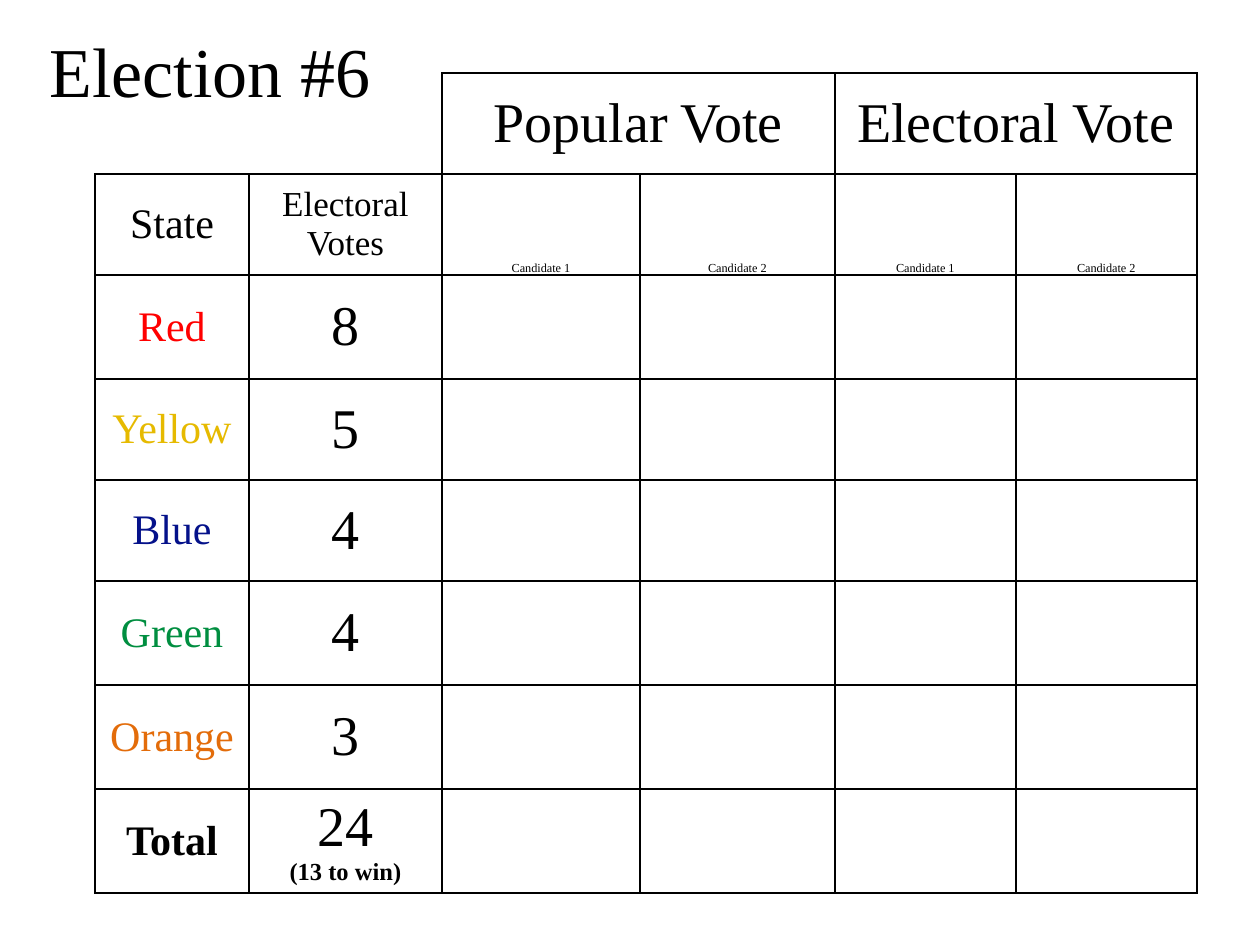
import pptx
import pptx.dml.color
import pptx.enum.text
import pptx.oxml
import pptx.oxml.ns
import pptx.util

SCALE = 914400 / 126
ALIGN = pptx.enum.text.PP_ALIGN
ANCHOR = pptx.enum.text.MSO_ANCHOR
BLACK = "000000"

COLS = [154, 193, 198, 195, 181, 181]
ROWS = [101, 101, 104, 101, 101, 104, 104, 104]
STATES = [
    ("Red", "FF0000", 8),
    ("Yellow", "E6BA00", 5),
    ("Blue", "04118A", 4),
    ("Green", "008E40", 4),
    ("Orange", "E36C0A", 3),
]


def px(size):
    return pptx.util.Emu(round(size * SCALE))


def paint(font, color):
    font.color.rgb = pptx.dml.color.RGBColor.from_string(color)


def write(frame, text, size=24, color=BLACK, bold=False, more=False):
    """Put centred text in a frame; more=True adds a new paragraph."""
    para = frame.add_paragraph() if more else frame.paragraphs[0]
    para.alignment = ALIGN.CENTER
    run = para.add_run()
    run.text = text
    run.font.name = "Times New Roman"
    run.font.size = pptx.util.Pt(size)
    run.font.bold = bold
    paint(run.font, color)


class Deck:
    def __init__(self, wide, high):
        self.show = pptx.Presentation()
        self.show.slide_width, self.show.slide_height = px(wide), px(high)
        self.slide = self.show.slides.add_slide(self.show.slide_layouts[5])

    def title(self, text, left, top, wide, high):
        shape = self.slide.shapes.title
        shape.left, shape.top = px(left), px(top)
        shape.width, shape.height = px(wide), px(high)
        frame = shape.text_frame
        frame.vertical_anchor = ANCHOR.TOP
        frame.auto_size = pptx.enum.text.MSO_AUTO_SIZE.SHAPE_TO_FIT_TEXT
        write(frame, text, size=40)

    def table(self, left, top, cols, rows):
        shape = self.slide.shapes.add_table(
            len(rows), len(cols), px(left), px(top), px(sum(cols)), px(sum(rows)))
        grid = shape.table
        grid.first_row = grid.horz_banding = False
        for col, wide in zip(grid.columns, cols):
            col.width = px(wide)
        for row, high in zip(grid.rows, rows):
            row.height = px(high)
        for r in range(len(rows)):
            for c in range(len(cols)):
                blank = r == 0 and c < 2
                self.style(grid.cell(r, c), "RB" if blank else "LRTB")
        return grid

    def style(self, cell, sides):
        """Rule the named sides of a cell, and clear its fill."""
        cell.margin_left = cell.margin_right = px(8)
        cell.margin_top = cell.margin_bottom = 0
        cell.vertical_anchor = ANCHOR.MIDDLE
        props = cell._tc.get_or_add_tcPr()
        for side in "LRTB":
            fill = (f'<a:solidFill><a:srgbClr val="{BLACK}"/></a:solidFill>'
                    if side in sides else "<a:noFill/>")
            props.append(pptx.oxml.parse_xml(
                f'<a:ln{side} {pptx.oxml.ns.nsdecls("a")} w="12700">{fill}</a:ln{side}>'))
        cell.fill.background()


def main():
    deck = Deck(1260, 945)
    grid = deck.table(95, 73, COLS, ROWS)
    for c, text in enumerate(["", "Popular Vote", "Electoral Vote"]):
        head = grid.cell(0, 2 * c)
        head.merge(grid.cell(0, 2 * c + 1))
        if text:
            write(head.text_frame, text, size=32)
    # The blank corner has no rule between its two columns.
    deck_corner = grid.cell(0, 1)._tc.tcPr
    deck_corner.find(pptx.oxml.ns.qn("a:lnL"))

    write(grid.cell(1, 0).text_frame, "State")
    write(grid.cell(1, 1).text_frame, "Electoral Votes", size=20)
    for c in range(2, 6):
        cell = grid.cell(1, c)
        cell.vertical_anchor = ANCHOR.BOTTOM
        write(cell.text_frame, f"Candidate {c % 2 + 1}", size=7)

    for r, (state, color, votes) in enumerate(STATES, 2):
        write(grid.cell(r, 0).text_frame, state, color=color)
        write(grid.cell(r, 1).text_frame, str(votes), size=32)

    write(grid.cell(7, 0).text_frame, "Total", bold=True)
    total = grid.cell(7, 1).text_frame
    write(total, str(sum(votes for _, _, votes in STATES)), size=32)
    write(total, "(13 to win)", size=14, bold=True, more=True)

    deck.title("Election #6", 0, 21, 420, 97)
    deck.show.save("out.pptx")


if __name__ == "__main__":
    main()
